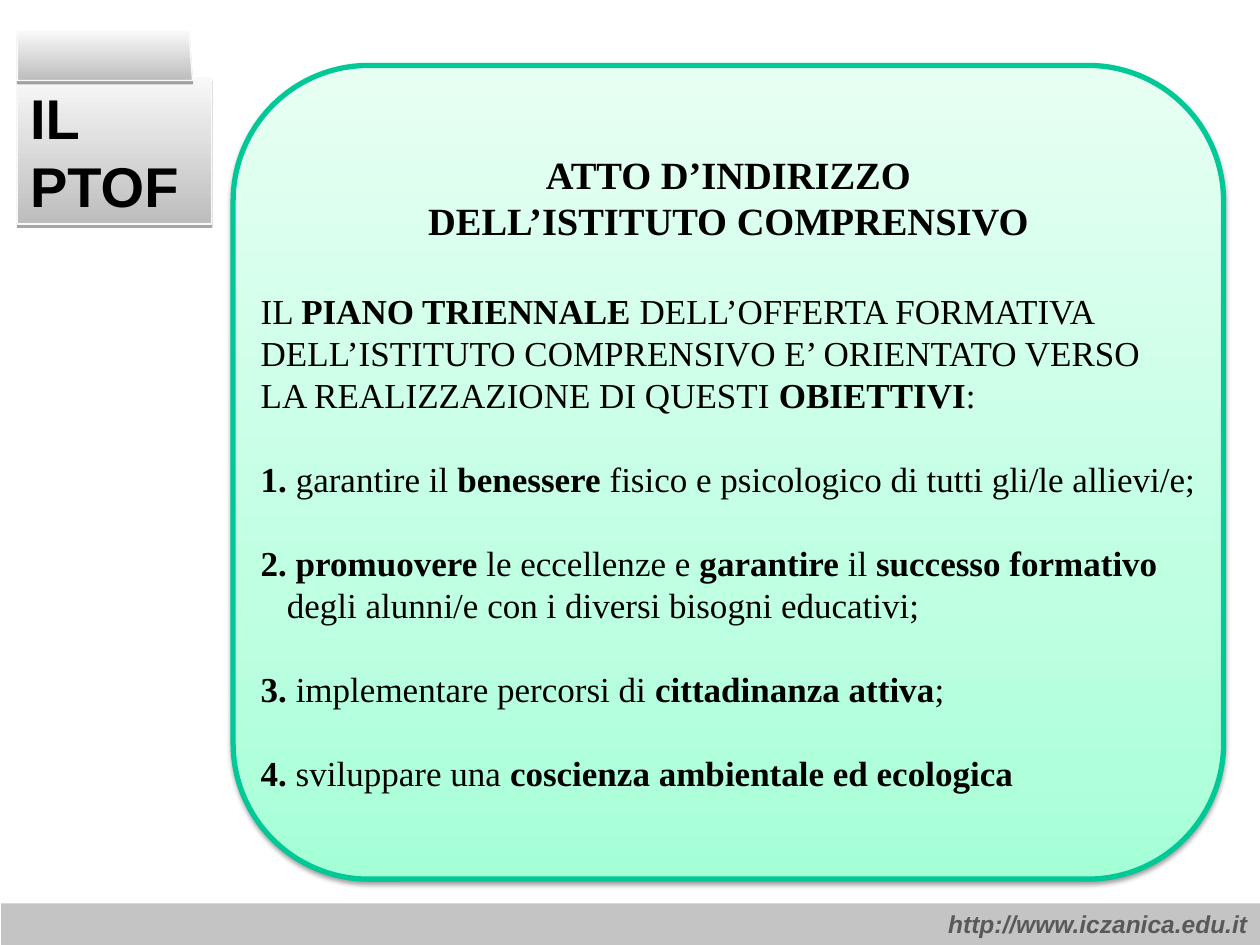
from lxml.etree import SubElement
from pptx import Presentation
from pptx.dml.color import RGBColor
from pptx.enum.shapes import MSO_SHAPE
from pptx.enum.text import MSO_ANCHOR, PP_ALIGN
from pptx.oxml.ns import qn
from pptx.util import Pt

BLACK = RGBColor(0x00, 0x00, 0x00)
GREEN = RGBColor(0x00, 0xC8, 0x96)
EDGE = RGBColor(0xF9, 0xF9, 0xF9)
BAR = RGBColor(0xC4, 0xC4, 0xC4)
URL_GRAY = RGBColor(0x59, 0x59, 0x59)
GRAYS = [(0, RGBColor(0xF8, 0xF8, 0xF8)), (100, RGBColor(0xBD, 0xBD, 0xBD))]
GREENS = [(0, RGBColor(0xA5, 0xFF, 0xD6)), (35, RGBColor(0xBF, 0xFF, 0xE2)),
          (100, RGBColor(0xE7, 0xFF, 0xF3))]

SANS = "Arial"
SERIF = "Times New Roman"

HEADING = ["ATTO D’INDIRIZZO", "DELL’ISTITUTO COMPRENSIVO"]
BODY = [
    (26, 0, [("IL ", False), ("PIANO TRIENNALE ", True),
             ("DELL’OFFERTA FORMATIVA", False)]),
    (0, 0, [("DELL’ISTITUTO COMPRENSIVO E’ ORIENTATO VERSO", False)]),
    (0, 0, [("LA REALIZZAZIONE DI QUESTI ", False), ("OBIETTIVI", True),
            (":", False)]),
    (24, 0, [("1. ", True), ("garantire il ", False), ("benessere", True),
             (" fisico e psicologico di tutti gli/le allievi/e;", False)]),
    (24, 0, [("2. promuovere ", True), ("le eccellenze e ", False),
             ("garantire", True), (" il ", False),
             ("successo formativo", True)]),
    (0, 15, [("degli alunni/e con i diversi bisogni educativi;", False)]),
    (24, 0, [("3. ", True), ("implementare percorsi di ", False),
             ("cittadinanza attiva", True), (";", False)]),
    (24, 0, [("4.", True), (" sviluppare una ", False),
             ("coscienza ambientale ed ecologica", True)]),
]


class Deck:
    def __init__(self, prs):
        self.s = prs.slides.add_slide(prs.slide_layouts[5])

    def gradient(self, sp, stops, angle):
        sp.fill.gradient()
        sp.fill.gradient_angle = angle
        stop_list = sp._element.spPr.find(qn("a:gradFill")).find(qn("a:gsLst"))
        stop_list.clear()
        for pos, color in stops:
            gs = SubElement(stop_list, qn("a:gs"), pos=str(pos * 1000))
            SubElement(gs, qn("a:srgbClr"), val=str(color))

    def shadow(self, sp, blur, dist, alpha):
        sp.shadow.inherit = False
        effects = sp._element.spPr.find(qn("a:effectLst"))
        outer = SubElement(effects, qn("a:outerShdw"), blurRad=str(Pt(blur)),
                           dist=str(Pt(dist)), dir="5400000", rotWithShape="0")
        clr = SubElement(outer, qn("a:srgbClr"), val=str(BLACK))
        SubElement(clr, qn("a:alpha"), val=str(alpha * 1000))

    def outline(self, sp, color, width):
        sp.line.color.rgb = color
        sp.line.width = Pt(width)

    def folder_style(self, sp):
        self.gradient(sp, GRAYS, 270)
        self.outline(sp, EDGE, 0.75)
        self.shadow(sp, 0, 1.8, 35)

    def run(self, p, text, size, font, color=BLACK, bold=True, italic=False):
        r = p.add_run()
        r.text = text
        f = r.font
        f.size, f.name, f.bold, f.italic = Pt(size), font, bold, italic
        f.color.rgb = color

    def title(self, text, x, y, w, h):
        sp = self.s.shapes.title
        sp.left, sp.top, sp.width, sp.height = Pt(x), Pt(y), Pt(w), Pt(h)
        self.folder_style(sp)
        tf = sp.text_frame
        tf.word_wrap = True
        tf.vertical_anchor = MSO_ANCHOR.MIDDLE
        p = tf.paragraphs[0]
        p.alignment = PP_ALIGN.LEFT
        self.run(p, text, 32, SANS)

    def tab(self, points):
        builder = self.s.shapes.build_freeform(*points[0], scale=Pt(1))
        builder.add_line_segments(points[1:], close=True)
        self.folder_style(builder.convert_to_shape())

    def panel(self, x, y, w, h):
        sp = self.s.shapes.add_shape(MSO_SHAPE.ROUNDED_RECTANGLE,
                                     Pt(x), Pt(y), Pt(w), Pt(h))
        self.gradient(sp, GREENS, 90)
        self.outline(sp, GREEN, 3)
        self.shadow(sp, 3.1, 1.6, 38)
        tf = sp.text_frame
        tf.word_wrap = False
        tf.vertical_anchor = MSO_ANCHOR.MIDDLE
        for i, text in enumerate(HEADING):
            p = tf.add_paragraph() if i else tf.paragraphs[0]
            p.alignment = PP_ALIGN.CENTER
            self.run(p, text, 22, SERIF)
        for gap, indent, runs in BODY:
            p = tf.add_paragraph()
            p.alignment = PP_ALIGN.LEFT
            if gap:
                p.space_before = Pt(gap)
            if indent:
                p._p.get_or_add_pPr().set("marL", str(Pt(indent)))
            for text, bold in runs:
                self.run(p, text, 20, SERIF, bold=bold)

    def footer(self, text, x, y, w, h):
        sp = self.s.shapes.add_shape(MSO_SHAPE.RECTANGLE,
                                     Pt(x), Pt(y), Pt(w), Pt(h))
        sp.fill.solid()
        sp.fill.fore_color.rgb = BAR
        sp.line.fill.background()
        sp.shadow.inherit = False
        tf = sp.text_frame
        tf.word_wrap = True
        tf.vertical_anchor = MSO_ANCHOR.BOTTOM
        p = tf.paragraphs[0]
        p.alignment = PP_ALIGN.RIGHT
        self.run(p, text, 14, SANS, URL_GRAY, italic=True)


def main():
    prs = Presentation()
    prs.slide_width, prs.slide_height = Pt(720), Pt(540)
    deck = Deck(prs)
    deck.title("IL PTOF", 10, 44.6, 111, 83.5)
    deck.tab([(10, 18), (108, 18), (110.5, 46), (10, 46)])
    deck.panel(133.2, 37.4, 566, 465)
    deck.footer("http://www.iczanica.edu.it", 0.7, 516.2, 719.3, 23.8)
    prs.save("out.pptx")


if __name__ == "__main__":
    main()
